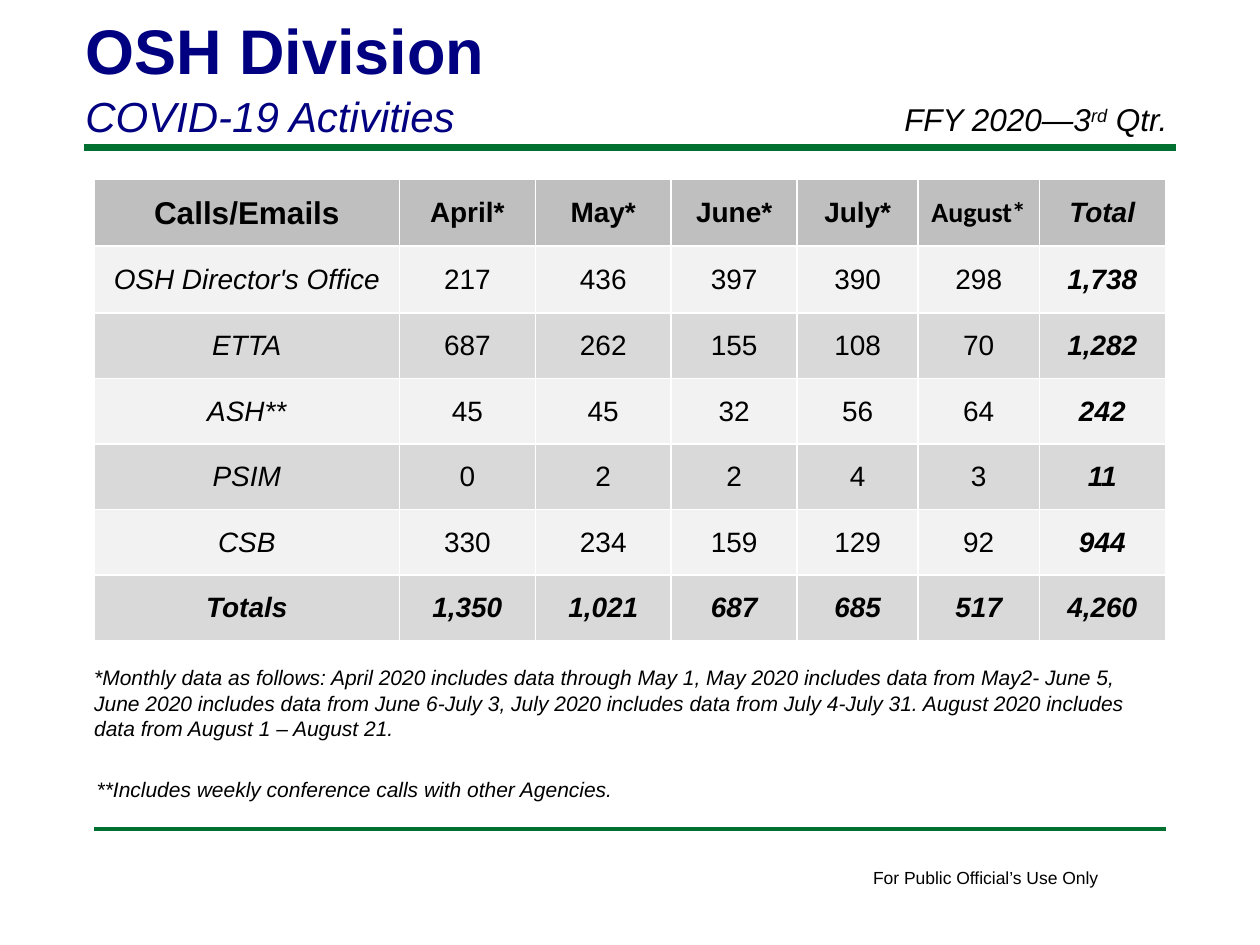
from lxml import etree
from pptx import Presentation
from pptx.dml.color import RGBColor
from pptx.enum import shapes, text
from pptx.oxml.ns import qn
from pptx.util import Cm, Pt

THEME = {
    "font": "Arial", "alt_font": "Calibri",
    "black": "000000", "navy": "000080", "green": "007030", "white": "FFFFFF",
    "header": "BFBFBF", "bands": ("F2F2F2", "D9D9D9"),
    "title": 36, "subtitle": 24, "heading": 18, "cell": 16, "note": 12, "footer": 10,
}

ROWS = [
    ("Calls/Emails", "April*", "May*", "June*", "July*", "August*", "Total"),
    ("OSH Director's Office", "217", "436", "397", "390", "298", "1,738"),
    ("ETTA", "687", "262", "155", "108", "70", "1,282"),
    ("ASH**", "45", "45", "32", "56", "64", "242"),
    ("PSIM", "0", "2", "2", "4", "3", "11"),
    ("CSB", "330", "234", "159", "129", "92", "944"),
    ("Totals", "1,350", "1,021", "687", "685", "517", "4,260"),
]
COL_WIDTHS = (6.15, 2.74, 2.74, 2.54, 2.44, 2.44, 2.54)
ROW_HEIGHTS = (1.35, 1.35, 1.32, 1.32, 1.32, 1.32, 1.32)
TABLE_LEFT, TABLE_TOP = 1.9, 3.61

RULES = [(1.7, 23.7, 2.97, 4), (1.9, 23.5, 16.71, 2)]

NOTE = {"size": THEME["note"], "italic": True}
QUARTER = {"size": THEME["heading"], "italic": True}
BOXES = [
    {"at": (17.35, 17.35, 5.11, 0.69), "wrap": False,
     "paragraphs": [[("For Public Official’s Use Only", {"size": THEME["footer"]})]]},
    {"at": (1.47, 0.15, 20.96, 2.82), "anchor": text.MSO_ANCHOR.BOTTOM, "gap": 2,
     "paragraphs": [
         [("OSH Division", {"size": THEME["title"], "bold": True, "color": THEME["navy"]})],
         [("COVID-19 Activities", {"size": THEME["subtitle"], "italic": True, "color": THEME["navy"]})],
     ]},
    {"at": (1.65, 13.28, 21.84, 1.8),
     "paragraphs": [
         [("*Monthly data as follows: April 2020 includes data through May 1, "
           "May 2020 includes data from May2- June 5,", NOTE)],
         [("June 2020 includes data from June 6-July 3, July 2020 includes data from "
           "July 4-July 31. August 2020 includes data from August 1 – August 21.", NOTE)],
     ]},
    {"at": (17.98, 1.9, 6.35, 1.02),
     "paragraphs": [[("FFY 2020—3", QUARTER), ("rd", {**QUARTER, "baseline": 30000}), (" Qtr.", QUARTER)]]},
    {"at": (1.7, 15.52, 11, 0.76), "wrap": False,
     "paragraphs": [[("**Includes weekly conference calls with other Agencies.", NOTE)]]},
]


def add_run(p, words, size, color=THEME["black"], name=THEME["font"], bold=False, italic=False, baseline=None):
    r = p.add_run()
    r.text = words
    for key, value in {"size": Pt(size), "name": name, "bold": bold, "italic": italic}.items():
        setattr(r.font, key, value)
    r.font.color.rgb = RGBColor.from_string(color)
    if baseline:
        r._r.get_or_add_rPr().set("baseline", str(baseline))


def add_rule(slide, left, right, y, width):
    line = slide.shapes.add_connector(shapes.MSO_CONNECTOR.STRAIGHT, Cm(left), Cm(y), Cm(right), Cm(y))
    line.line.color.rgb = RGBColor.from_string(THEME["green"])
    line.line.width = Pt(width)
    etree.SubElement(line._element.spPr, qn("a:effectLst"))


def add_box(slide, at, paragraphs, wrap=True, anchor=text.MSO_ANCHOR.TOP, gap=0):
    tf = slide.shapes.add_textbox(*map(Cm, at)).text_frame
    tf.word_wrap = wrap
    tf.vertical_anchor = anchor
    for i, runs in enumerate(paragraphs):
        p = tf.add_paragraph() if i else tf.paragraphs[0]
        if i and gap:
            p.space_before = Pt(gap)
        for words, style in runs:
            add_run(p, words, **style)


def set_borders(cell):
    tcPr = cell._tc.get_or_add_tcPr()
    for i, side in enumerate(("lnL", "lnR", "lnT", "lnB")):
        ln = etree.Element(qn(f"a:{side}"), w=str(Pt(1)))
        fill = etree.SubElement(ln, qn("a:solidFill"))
        etree.SubElement(fill, qn("a:srgbClr"), val=THEME["white"])
        tcPr.insert(i, ln)


def cell_style(row, col):
    last_row, last_col = len(ROWS) - 1, len(COL_WIDTHS) - 1
    header, total = row == 0, row == last_row or col == last_col
    return {
        "size": THEME["heading"] if header and col == 0 else THEME["cell"],
        "name": THEME["alt_font"] if ROWS[row][col] == "August*" else THEME["font"],
        "bold": header or total,
        "italic": total or (col == 0 and not header),
    }


def add_calls_table(slide):
    table = slide.shapes.add_table(
        len(ROWS), len(COL_WIDTHS), Cm(TABLE_LEFT), Cm(TABLE_TOP),
        Cm(sum(COL_WIDTHS)), Cm(sum(ROW_HEIGHTS))).table
    for column, width in zip(table.columns, COL_WIDTHS):
        column.width = Cm(width)
    for i, (values, height) in enumerate(zip(ROWS, ROW_HEIGHTS)):
        table.rows[i].height = Cm(height)
        color = THEME["bands"][(i - 1) % 2] if i else THEME["header"]
        for j, value in enumerate(values):
            cell = table.cell(i, j)
            cell.fill.solid()
            cell.fill.fore_color.rgb = RGBColor.from_string(color)
            set_borders(cell)
            layout = {"vertical_anchor": text.MSO_ANCHOR.MIDDLE, "margin_left": Cm(0.02),
                      "margin_right": Cm(0.02), "margin_top": Cm(0.02), "margin_bottom": 0}
            for key, setting in layout.items():
                setattr(cell, key, setting)
            p = cell.text_frame.paragraphs[0]
            p.alignment = text.PP_ALIGN.CENTER
            add_run(p, value, **cell_style(i, j))


def main():
    prs = Presentation()
    prs.slide_width, prs.slide_height = Cm(25.4), Cm(19.05)
    s = prs.slides.add_slide(prs.slide_layouts[6])
    for rule in RULES:
        add_rule(s, *rule)
    add_calls_table(s)
    for box in BOXES:
        add_box(s, **box)
    prs.save("out.pptx")


if __name__ == "__main__":
    main()
